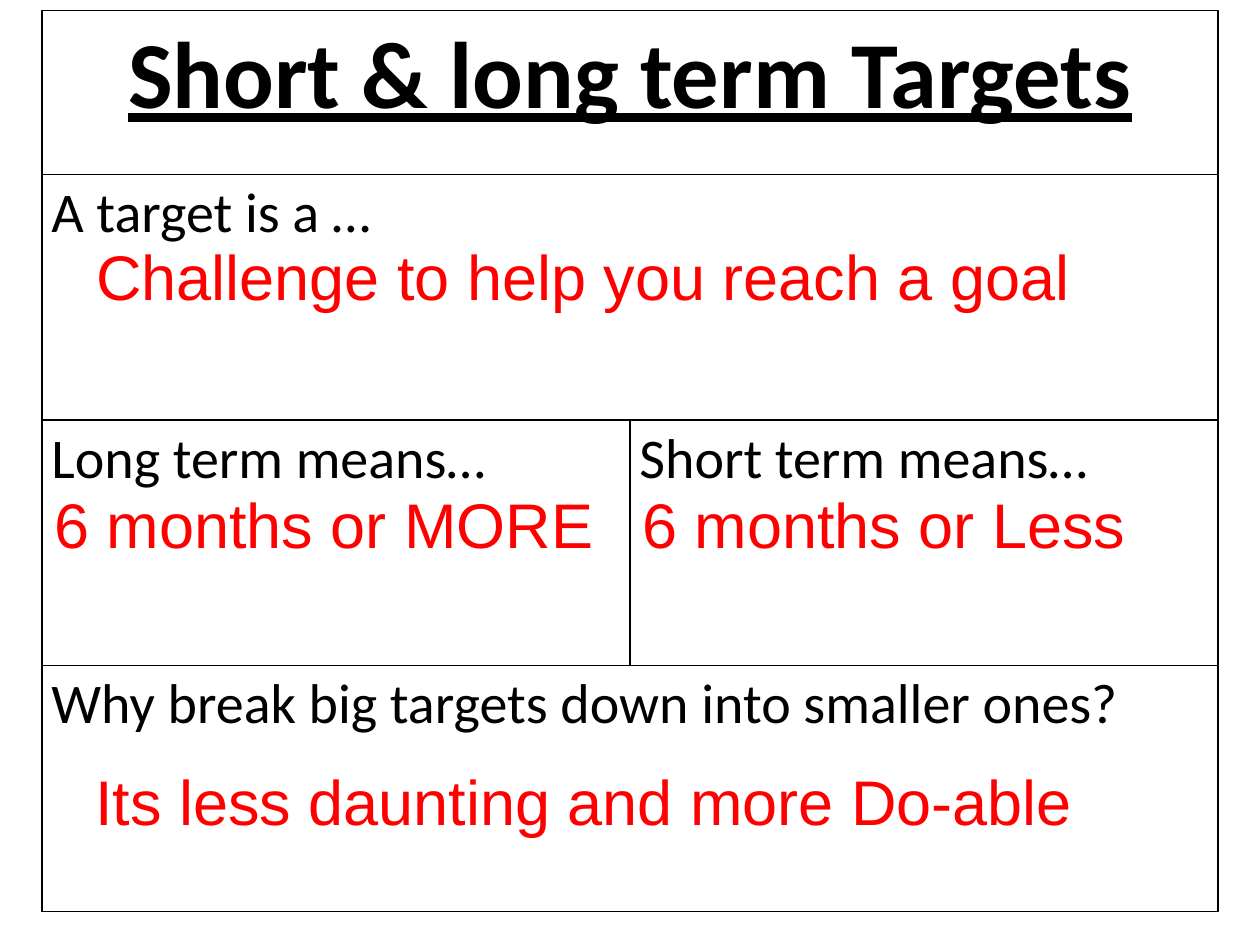
"""Build a one-page worksheet on short and long term targets."""
from typing import NamedTuple

from lxml import etree
from pptx import Presentation
from pptx.dml.color import RGBColor
from pptx.enum.text import MSO_AUTO_SIZE, PP_ALIGN
from pptx.oxml.ns import qn
from pptx.util import Pt

LEFT, CENTER = PP_ALIGN.LEFT, PP_ALIGN.CENTER
GROW = MSO_AUTO_SIZE.SHAPE_TO_FIT_TEXT
BLACK, RED = "000000", "FF0000"
EDGE, TOP, COL = 24, 6, 336
ROWS = [93.6, 140.4, 140.4, 140.4]
HEAD = {"name": "Calibri", "size": Pt(54), "bold": True, "underline": True}
BODY = {"name": "Calibri", "size": Pt(32), "bold": False, "underline": False}
REPLY = {"name": "Arial", "size": Pt(36)}
INSET = {"margin_left": Pt(5.4), "margin_right": Pt(5.4),
         "margin_top": 0, "margin_bottom": 0}


class Prompt(NamedTuple):
    row: int
    col: int
    text: str
    wide: bool = True
    style: dict = BODY
    align: PP_ALIGN = LEFT


class Answer(NamedTuple):
    left: float
    top: float
    width: float
    text: str


PROMPTS = [
    Prompt(0, 0, "Short & long term Targets", style=HEAD, align=CENTER),
    Prompt(1, 0, "A target is a …"),
    Prompt(2, 0, "Long term means…", wide=False),
    Prompt(2, 1, "Short term means…", wide=False),
    Prompt(3, 0, "Why break big targets down into smaller ones?"),
]
ANSWERS = [
    Answer(48, 132, 582, "Challenge to help you reach a goal"),
    Answer(EDGE, 273.6, 330, "6 months or MORE"),
    Answer(EDGE + COL, 273.6, 330, "6 months or Less"),
    Answer(47.5, 432, 618, "Its less daunting and more Do-able"),
]


def color(code: str) -> RGBColor:
    """Turn a hex string into a colour."""
    return RGBColor.from_string(code)


def apply(target, values: dict) -> None:
    """Set each named value on the target."""
    for key, value in values.items():
        setattr(target, key, value)


def write(para, text: str, style: dict, code: str) -> None:
    """Add one styled run to a paragraph."""
    run = para.add_run()
    run.text = text
    apply(run.font, style)
    run.font.color.rgb = color(code)


def frame(cell) -> None:
    """Clear the fill of a cell and rule its four sides."""
    cell.fill.background()
    props = cell._tc.get_or_add_tcPr()
    for spot, side in enumerate(("a:lnL", "a:lnR", "a:lnT", "a:lnB")):
        line = etree.Element(qn(side), w=str(Pt(1)))
        fill = etree.SubElement(line, qn("a:solidFill"))
        etree.SubElement(fill, qn("a:srgbClr"), val=BLACK)
        props.insert(spot, line)


def add_grid(slide):
    """Add the empty ruled table."""
    grid = slide.shapes.add_table(len(ROWS), 2, Pt(EDGE), Pt(TOP),
                                  Pt(2 * COL), Pt(sum(ROWS))).table
    apply(grid, {"first_row": False, "horz_banding": False})
    for col in grid.columns:
        col.width = Pt(COL)
    for row, height in zip(grid.rows, ROWS):
        row.height = Pt(height)
    for cell in grid.iter_cells():
        frame(cell)
    return grid


def add_prompt(grid, item: Prompt) -> None:
    """Fill one cell, merged over the row when wide."""
    cell = grid.cell(item.row, item.col)
    if item.wide:
        cell.merge(grid.cell(item.row, 1))
    apply(cell, INSET)
    para = cell.text_frame.paragraphs[0]
    apply(para, {"alignment": item.align, "line_spacing": 1.07})
    write(para, item.text, item.style, BLACK)


def add_answer(slide, item: Answer) -> None:
    """Add one red answer over the table."""
    box = slide.shapes.add_textbox(Pt(item.left), Pt(item.top),
                                   Pt(item.width), Pt(51))
    apply(box.text_frame, {"word_wrap": True, "auto_size": GROW})
    write(box.text_frame.paragraphs[0], item.text, REPLY, RED)


def main() -> None:
    """Build and save the slide."""
    deck = Presentation()
    apply(deck, {"slide_width": Pt(720), "slide_height": Pt(540)})
    slide = deck.slides.add_slide(deck.slide_layouts[6])
    grid = add_grid(slide)
    for item in PROMPTS:
        add_prompt(grid, item)
    for item in ANSWERS:
        add_answer(slide, item)
    deck.save("out.pptx")


if __name__ == "__main__":
    main()
